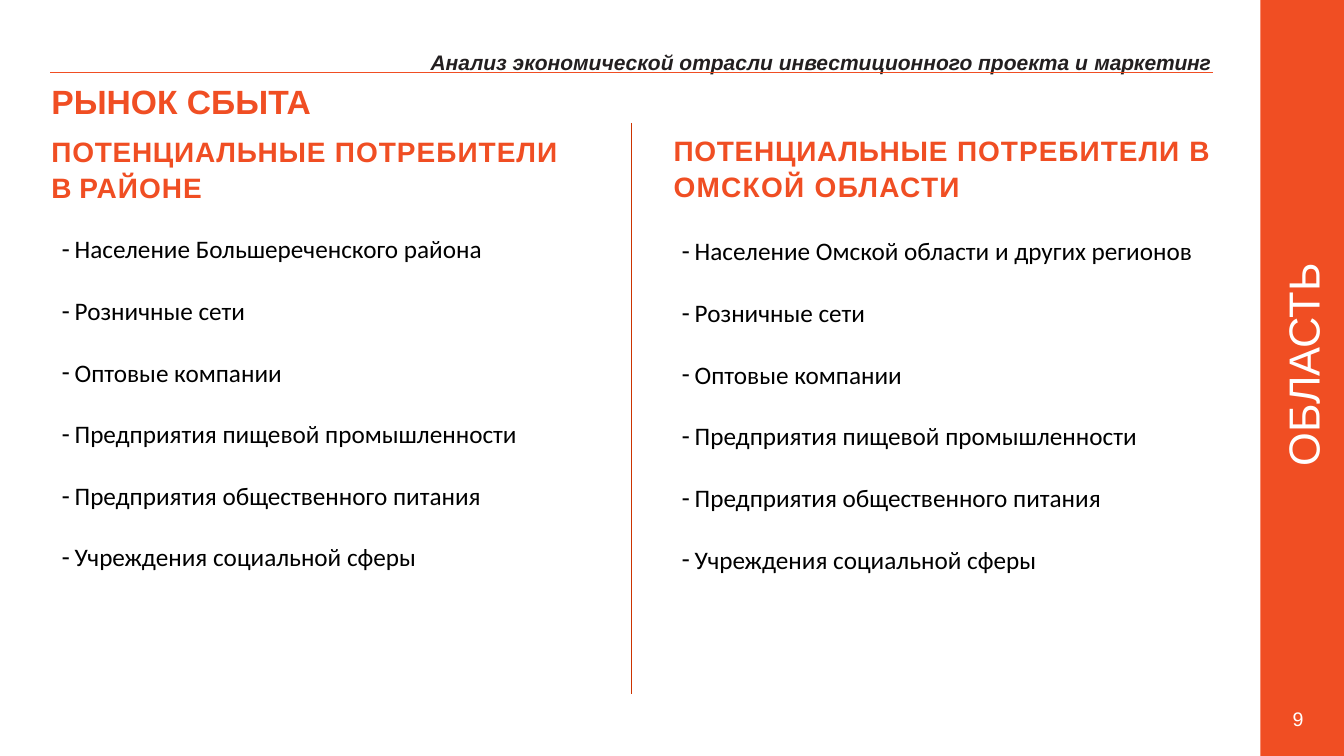
from lxml.etree import SubElement
from pptx import Presentation
from pptx.dml.color import RGBColor
from pptx.enum.shapes import MSO_CONNECTOR, MSO_SHAPE
from pptx.enum.text import MSO_ANCHOR, MSO_AUTO_SIZE, PP_ALIGN
from pptx.oxml.ns import qn
from pptx.util import Inches, Pt

COLORS = {"accent": "F04E23", "divider": "CC3300", "header": "231F20",
          "text": "000000", "white": "FFFFFF"}
COMMON_CONSUMERS = ["Розничные сети", "Оптовые компании",
                    "Предприятия пищевой промышленности",
                    "Предприятия общественного питания",
                    "Учреждения социальной сферы"]


def color(name):
    """Return the named palette colour."""
    return RGBColor.from_string(COLORS[name])


def place(shape, box):
    """Move a shape to a box given in inches."""
    shape.left, shape.top, shape.width, shape.height = map(Inches, box)


def prepare_frame(shape, inset_left=0, inset_top=0.04, wrap=True):
    """Set the margins, wrapping and anchor of a text frame and return it."""
    frame = shape.text_frame
    frame.auto_size = MSO_AUTO_SIZE.NONE
    frame.word_wrap = wrap
    frame.vertical_anchor = MSO_ANCHOR.TOP
    frame.margin_left = Inches(inset_left)
    frame.margin_top = Inches(inset_top)
    frame.margin_right = frame.margin_bottom = 0
    return frame


def add_run(paragraph, text, size, color_name, font="Arial", bold=False, italic=False, spacing=0):
    """Append one formatted run, with letter spacing in points."""
    run = paragraph.add_run()
    run.text = text
    run.font.name = font
    run.font.size = Pt(size)
    run.font.bold = bold
    run.font.italic = italic
    run.font.color.rgb = color(color_name)
    if spacing:
        run._r.get_or_add_rPr().set("spc", str(round(spacing * 100)))


def write_lines(frame, lines, size, color_name, gap=0, align=PP_ALIGN.LEFT, **style):
    """Write lines of (text, letter spacing) runs, one paragraph each."""
    for index, runs in enumerate(lines):
        paragraph = frame.add_paragraph() if index else frame.paragraphs[0]
        paragraph.alignment = align
        paragraph.space_before = Pt(gap if index else 0)
        for text, spacing in runs:
            add_run(paragraph, text, size, color_name, spacing=spacing, **style)


def add_line(slide, start, end, color_name, width):
    """Draw a straight line without a shadow."""
    line = slide.shapes.add_connector(MSO_CONNECTOR.STRAIGHT, *map(Inches, start + end))
    line.line.color.rgb = color(color_name)
    line.line.width = Pt(width)
    SubElement(line._element.spPr, qn("a:effectLst"))


def add_sidebar(slide, box):
    """Draw the side band with its vertical word and the slide number."""
    left, top, width, height = box
    band = slide.shapes.add_shape(MSO_SHAPE.RECTANGLE, *map(Inches, box))
    band.shadow.inherit = False
    band.fill.solid()
    band.fill.fore_color.rgb = color("accent")
    band.line.fill.background()

    word_width, word_height = 2.4, 0.6
    word = slide.shapes.add_textbox(0, 0, 0, 0)
    place(word, (left + width / 2 - word_width / 2, top + 3.62 - word_height / 2,
                 word_width, word_height))
    word.rotation = 270
    frame = prepare_frame(word, inset_top=0, wrap=False)
    frame.vertical_anchor = MSO_ANCHOR.MIDDLE
    write_lines(frame, [[("ОБЛАСТЬ", 0)]], 31, "white", align=PP_ALIGN.CENTER)

    number = slide.shapes.add_textbox(0, 0, 0, 0)
    place(number, (left + 0.32, top + height - 0.53, 0.21, 0.3))
    write_lines(prepare_frame(number), [[("9", -0.8)]], 14, "white")


def add_header(slide, box):
    """Place the section name, its rule and the slide title."""
    left, top, width, height = box
    section = slide.shapes.add_textbox(0, 0, 0, 0)
    place(section, (left + 3.77, top, width - 3.75, 0.28))
    runs = [("Анализ экономической отрасли инвестиционного проекта и ", 0), ("маркетинг", -0.1)]
    write_lines(prepare_frame(section, wrap=False), [runs], 15, "header", bold=True, italic=True)
    add_line(slide, (left, top + 0.27), (left + width, top + 0.27), "accent", 0.5)

    title = slide.shapes.title
    place(title, (left + 0.01, top + 0.31, width + 0.23, height - 0.31))
    write_lines(prepare_frame(title), [[("РЫНОК СБЫТА", 0)]], 24, "accent", bold=True)


def add_bullet(paragraph):
    """Give a paragraph a dash bullet with a hanging indent."""
    properties = paragraph._p.get_or_add_pPr()
    properties.set("marL", str(Inches(0.14)))
    properties.set("indent", str(Inches(-0.13)))
    SubElement(properties, qn("a:buChar")).set("char", "-")


def add_consumers(heading, listing, box, heading_lines, items, list_offset):
    """Fill one column with a heading and a list of consumers."""
    left, top, width, height = box
    place(heading, (left, top, width, 0.7))
    write_lines(prepare_frame(heading, inset_left=0.01), heading_lines, 20, "accent",
                gap=2, bold=True)

    offset_left, offset_top = list_offset
    place(listing, (left + offset_left, top + offset_top,
                    width - offset_left, height - offset_top))
    frame = prepare_frame(listing, inset_top=0.06)
    for index, item in enumerate(items):
        paragraph = frame.add_paragraph() if index else frame.paragraphs[0]
        add_bullet(paragraph)
        paragraph.line_spacing = Pt(20)
        paragraph.space_before = Pt(24 if index else 0)
        add_run(paragraph, item, 18, "text", font="Calibri")


def build_market_slide(presentation):
    """Build the sales market slide with two columns of consumers."""
    slide = presentation.slides.add_slide(presentation.slide_layouts[4])
    parts = {part.placeholder_format.idx: part for part in slide.placeholders}
    add_sidebar(slide, (12.5, 0, 0.83, 7.5))
    add_header(slide, (0.5, 0.45, 11.53, 0.73))
    add_line(slide, (6.26, 1.22), (6.26, 6.89), "divider", 0.75)
    add_consumers(
        parts[1], parts[2], (0.5, 1.29, 5.76, 4.43),
        [[("ПОТЕНЦИАЛЬНЫЕ ", 0.5), ("ПОТРЕБИТЕЛИ", 0.7)], [("В ", 0), ("РАЙОНЕ", 0.7)]],
        ["Население Большереченского района"] + COMMON_CONSUMERS, (0.1, 0.99))
    add_consumers(
        parts[3], parts[4], (6.67, 1.28, 5.76, 5.12),
        [[("ПОТЕНЦИАЛЬНЫЕ ", 0.5), ("ПОТРЕБИТЕЛИ ", 0.7), ("В", 0)], [("ОМСКОЙ ОБЛАСТИ", 0.9)]],
        ["Население Омской области и других регионов"] + COMMON_CONSUMERS, (0.08, 1.02))


def main():
    """Create the presentation and save it."""
    presentation = Presentation()
    presentation.slide_width = Inches(13.33)
    presentation.slide_height = Inches(7.5)
    build_market_slide(presentation)
    presentation.save("out.pptx")


if __name__ == "__main__":
    main()
